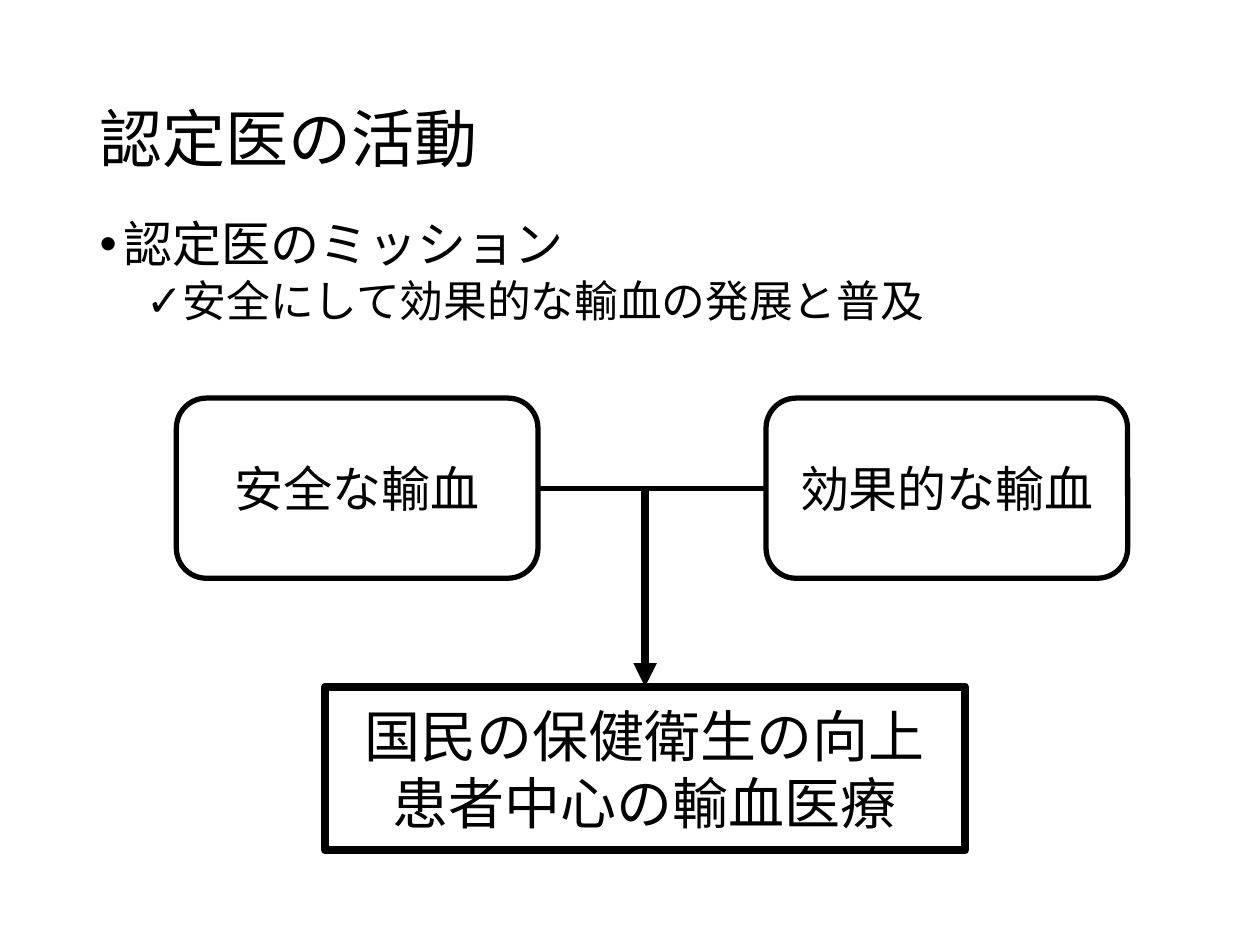
from lxml.etree import SubElement
from pptx import Presentation
from pptx.dml.color import RGBColor
from pptx.enum.shapes import MSO_CONNECTOR, MSO_SHAPE
from pptx.enum.text import MSO_ANCHOR, PP_ALIGN
from pptx.oxml.ns import qn
from pptx.util import Inches, Pt

BLACK = RGBColor(0, 0, 0)
WHITE = RGBColor(255, 255, 255)
FONT = "Arial"
THIN, THICK = 3, 4.5

BOX_TOP, BOX_WIDTH, BOX_HEIGHT = 3.16, 2.87, 1.43
LEFT_BOX, RIGHT_BOX = 1.4, 6.08
LINK_Y = BOX_TOP + BOX_HEIGHT / 2
GOAL_LEFT, GOAL_TOP, GOAL_WIDTH, GOAL_HEIGHT = 2.58, 5.45, 5.08, 1.3
ARROW_X = GOAL_LEFT + GOAL_WIDTH / 2


def place(shape, left, top, width, height):
    frame = {"left": left, "top": top, "width": width, "height": height}
    for name, value in frame.items():
        setattr(shape, name, Inches(value))


def write(paragraph, text, size, **paragraph_format):
    paragraph.text = text
    for name, value in paragraph_format.items():
        setattr(paragraph, name, value)
    font = paragraph.font
    for name, value in {"size": Pt(size), "name": FONT}.items():
        setattr(font, name, value)
    font.color.rgb = BLACK
    for run in paragraph.runs:
        run.font.size = Pt(size)
        run.font.name = FONT
        run.font.color.rgb = BLACK


def set_bullet(paragraph, symbol, margin, hanging=0.19):
    properties = paragraph._p.get_or_add_pPr()
    properties.set("marL", str(Inches(margin)))
    properties.set("indent", str(-Inches(hanging)))
    SubElement(properties, qn("a:buFont"), typeface=FONT)
    SubElement(properties, qn("a:buChar"), char=symbol)


def add_title(slide, text):
    title = slide.shapes.title
    place(title, 0.69, 0.4, 8.62, 1.45)
    title.text_frame.vertical_anchor = MSO_ANCHOR.MIDDLE
    write(title.text_frame.paragraphs[0], text, 36,
          alignment=PP_ALIGN.LEFT, line_spacing=0.9)


def add_list(slide, items):
    body = slide.placeholders[1]
    place(body, 0.69, 1.7, 8.62, 4.76)
    frame = body.text_frame
    for index, (text, size, symbol, margin, space) in enumerate(items):
        paragraph = frame.add_paragraph() if index else frame.paragraphs[0]
        write(paragraph, text, size, level=index, line_spacing=0.9,
              space_before=Pt(space))
        set_bullet(paragraph, symbol, margin)


def add_box(slide, kind, bounds, lines, size, line_width):
    box = slide.shapes.add_shape(kind, *map(Inches, bounds))
    box.shadow.inherit = False
    box.fill.solid()
    box.fill.fore_color.rgb = WHITE
    box.line.color.rgb = BLACK
    box.line.width = Pt(line_width)
    frame = box.text_frame
    frame.word_wrap = True
    frame.vertical_anchor = MSO_ANCHOR.MIDDLE
    for index, text in enumerate(lines):
        paragraph = frame.add_paragraph() if index else frame.paragraphs[0]
        write(paragraph, text, size, alignment=PP_ALIGN.CENTER)


def add_line(slide, start, end, width, arrow=False):
    connector = slide.shapes.add_connector(
        MSO_CONNECTOR.STRAIGHT, *map(Inches, start + end))
    connector.line.color.rgb = BLACK
    connector.line.width = Pt(width)
    if arrow:
        SubElement(connector.line._get_or_add_ln(), qn("a:tailEnd"),
                   type="triangle")
    SubElement(connector._element.spPr, qn("a:effectLst"))


def main():
    presentation = Presentation()
    presentation.slide_width = Inches(10)
    presentation.slide_height = Inches(7.5)
    slide = presentation.slides.add_slide(presentation.slide_layouts[1])

    add_title(slide, "認定医の活動")
    add_list(slide, [
        ("認定医のミッション", 28, "•", 0.19, 7.5),
        ("安全にして効果的な輸血の発展と普及", 25, "✓", 0.56, 3.8),
    ])
    for left, text in ((LEFT_BOX, "安全な輸血"), (RIGHT_BOX, "効果的な輸血")):
        add_box(slide, MSO_SHAPE.ROUNDED_RECTANGLE,
                (left, BOX_TOP, BOX_WIDTH, BOX_HEIGHT), [text], 28, THIN)
    add_line(slide, (LEFT_BOX + BOX_WIDTH, LINK_Y), (RIGHT_BOX, LINK_Y), THIN)
    add_line(slide, (ARROW_X, LINK_Y), (ARROW_X, GOAL_TOP), THICK, arrow=True)
    add_box(slide, MSO_SHAPE.RECTANGLE,
            (GOAL_LEFT, GOAL_TOP, GOAL_WIDTH, GOAL_HEIGHT),
            ["国民の保健衛生の向上", "患者中心の輸血医療"], 32, THICK)
    presentation.save("out.pptx")


if __name__ == "__main__":
    main()
